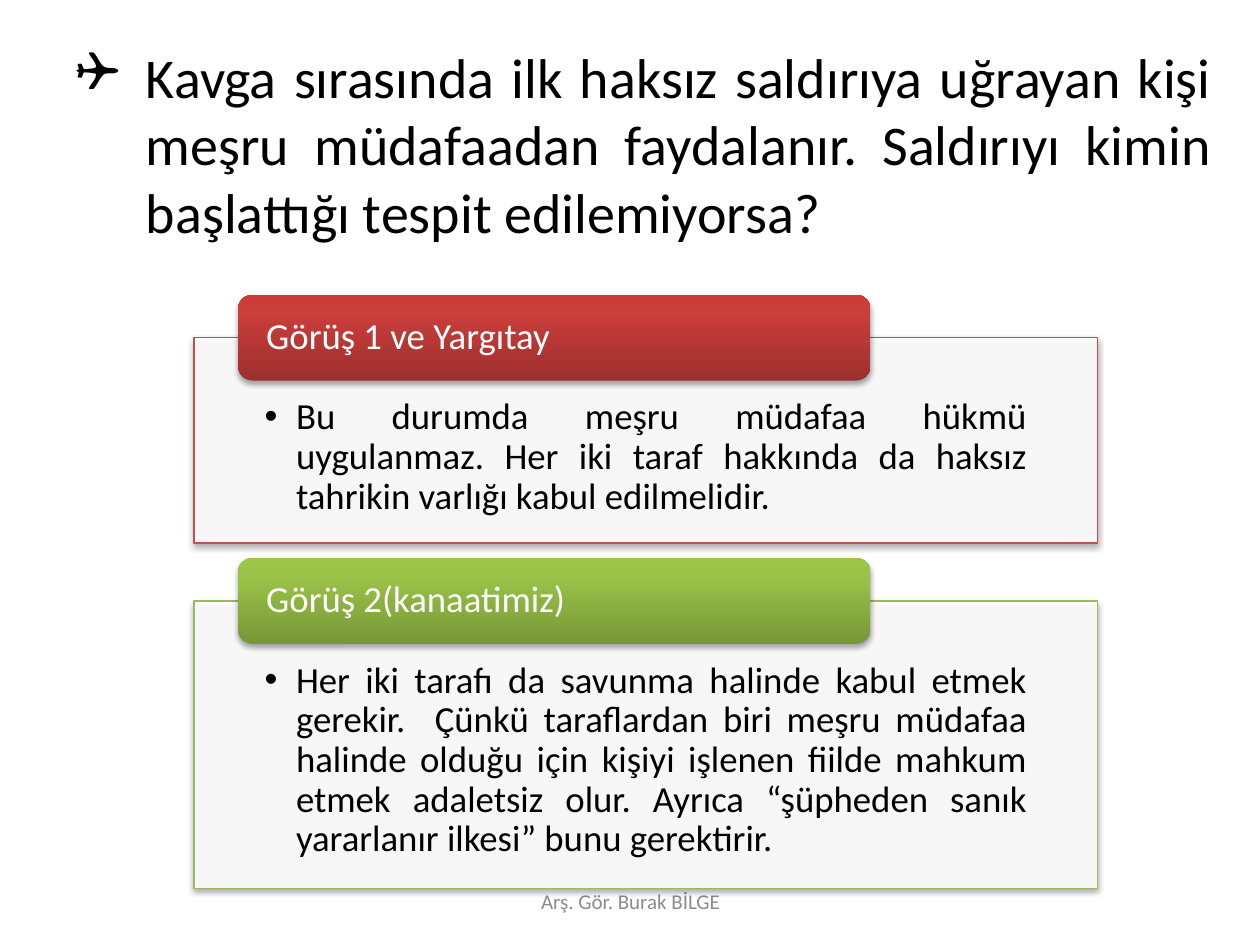
from copy import deepcopy

from lxml import etree
from pptx import Presentation
from pptx import util as u
from pptx.dml.color import RGBColor
from pptx.enum import shapes, text
from pptx.oxml.ns import qn

# Content
TITLE = ("Kavga sırasında ilk haksız saldırıya uğrayan kişi meşru müdafaadan "
         "faydalanır. Saldırıyı kimin başlattığı tespit edilemiyorsa?")
FOOTER = "Arş. Gör. Burak BİLGE"
VIEWS = [
    dict(head="Görüş 1 ve Yargıtay", line="C0504D", high=1.63,
         stops=[(0, "9C2F2D"), (0.8, "CB3E3A"), (1, "CE3B37")],
         body="Bu durumda meşru müdafaa hükmü uygulanmaz. Her iki taraf "
              "hakkında da haksız tahrikin varlığı kabul edilmelidir."),
    dict(head="Görüş 2(kanaatimiz)", line="9BBB59", high=2.28,
         stops=[(0, "779737"), (0.8, "9BC348"), (1, "9DC746")],
         body="Her iki tarafı da savunma halinde kabul etmek gerekir.  Çünkü "
              "taraflardan biri meşru müdafaa halinde olduğu için kişiyi "
              "işlenen fiilde mahkum etmek adaletsiz olur. Ayrıca “şüpheden "
              "sanık yararlanır ilkesi” bunu gerektirir."),
]

# Layout in inches
LEFT, WIDE = 1.54, 7.17
TAB_HIGH, GAP = 0.68, 0.12
TAB_LEFT, TAB_WIDE = LEFT + 0.35, WIDE * 0.7
TOP = 2.34

ALIGN, ANCHOR = text.PP_ALIGN, text.MSO_ANCHOR
KIND = shapes.MSO_SHAPE

deck = Presentation()
deck.slide_width, deck.slide_height = u.Inches(10), u.Inches(7.5)
slide = deck.slides.add_slide(deck.slide_layouts[6])


def color(code):
    return RGBColor.from_string(code)


def box(at):
    return [u.Inches(v) for v in at]


def node(up, tag, **attrs):
    return etree.SubElement(up, qn(tag), {k: str(v) for k, v in attrs.items()})


def write(shape, words, size, tint, inset, anchor=ANCHOR.TOP, **form):
    frame = shape.text_frame
    sides = ("margin_left", "margin_top", "margin_right", "margin_bottom")
    for side, value in zip(sides, box(inset)):
        setattr(frame, side, value)
    frame.word_wrap, frame.vertical_anchor = True, anchor
    para = frame.paragraphs[0]
    for key, value in form.items():
        setattr(para, key, value)
    run = para.add_run()
    run.text = words
    run.font.name, run.font.size = "Calibri", u.Pt(size)
    run.font.color.rgb = color(tint)
    return para


def bullet(para, sign, font, indent):
    props = para._p.get_or_add_pPr()
    props.set("marL", str(u.Inches(indent)))
    props.set("indent", str(-u.Inches(indent)))
    node(props, "a:buFont", typeface=font)
    node(props, "a:buChar", char=sign)


def shade(shape):
    shape.shadow.inherit = False
    effects = shape._element.spPr.find(qn("a:effectLst"))
    outer = node(effects, "a:outerShdw", blurRad=u.Pt(3.1), dist=u.Pt(1.8),
                 dir=5400000, rotWithShape=0)
    node(node(outer, "a:srgbClr", val="000000"), "a:alpha", val=35000)


def panel(view, top):
    shape = slide.shapes.add_shape(
        KIND.RECTANGLE, *box((LEFT, top, WIDE, view["high"])))
    shape.fill.solid()
    shape.fill.fore_color.rgb = color("FFFFFF")
    white = shape._element.spPr.find(qn("a:solidFill"))[0]
    node(white, "a:alpha", val=90000)
    shape.line.color.rgb, shape.line.width = color(view["line"]), u.Pt(0.75)
    shade(shape)
    para = write(shape, view["body"], 21, "000000", (0.56, 0.48, 0.56, 0.16),
                 alignment=ALIGN.JUSTIFY, line_spacing=0.9)
    bullet(para, "•", "Arial", 0.25)


def tab(view, top):
    shape = slide.shapes.add_shape(
        KIND.ROUNDED_RECTANGLE, *box((TAB_LEFT, top, TAB_WIDE, TAB_HIGH)))
    shape.fill.gradient()
    shape.fill.gradient_angle = 90
    stops = shape._element.spPr.find(qn("a:gradFill")).find(qn("a:gsLst"))
    stops.append(deepcopy(stops[-1]))
    for stop, (place, code) in zip(shape.fill.gradient_stops, view["stops"]):
        stop.position, stop.color.rgb = place, color(code)
    shape.line.fill.background()
    shade(shape)
    write(shape, view["head"], 21, "FFFFFF", (0.19, 0, 0.19, 0),
          ANCHOR.MIDDLE, alignment=ALIGN.LEFT, line_spacing=0.9)


# Question
inset = (0.1, 0.05, 0.1, 0.05)
title = slide.shapes.add_textbox(*box((0.5, 0.29, 9.22, 1.9)))
para = write(title, TITLE, 32, "000000", inset, alignment=ALIGN.JUSTIFY,
             space_before=u.Pt(6.4))
bullet(para, "❑", "Wingdings", 0.56)

# Footer
foot = slide.shapes.add_textbox(*box((3.42, 6.95, 3.17, 0.4)))
write(foot, FOOTER, 12, "8C8C8C", inset, ANCHOR.MIDDLE,
      alignment=ALIGN.CENTER)

# Views: each tab straddles the top edge of its panel
top = TOP
for view in VIEWS:
    panel(view, top + TAB_HIGH / 2)
    tab(view, top)
    top += TAB_HIGH / 2 + view["high"] + GAP

deck.save("out.pptx")
